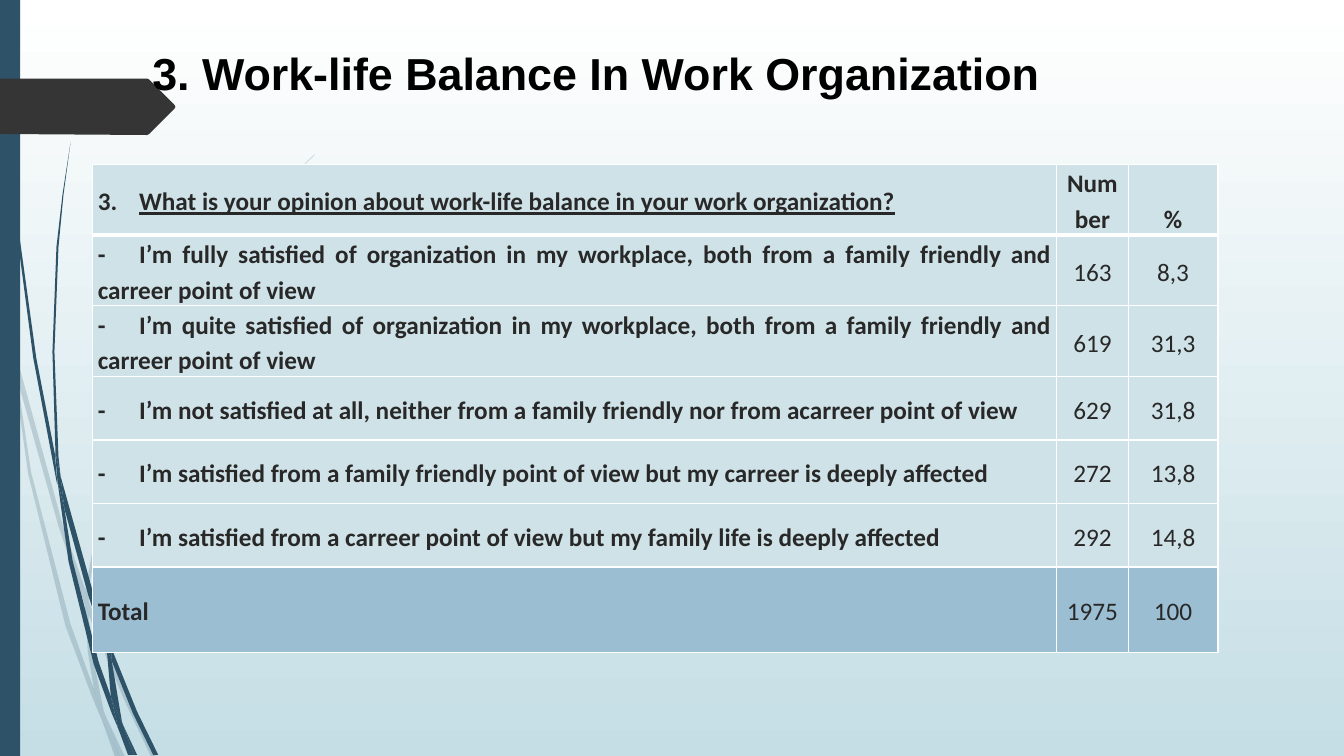
"""Build the slide on work-life balance in the work organization."""
import dataclasses

import pptx
import pptx.dml.color
import pptx.enum.shapes
import pptx.enum.text
import pptx.oxml
import pptx.oxml.ns
import pptx.shapes.shapetree
import pptx.slide
import pptx.table
import pptx.text.text
import pptx.util

PX = 9144
SLIDE_SIZE = (1333, 750)
WHITE = pptx.dml.color.RGBColor(0xFF, 0xFF, 0xFF)
BLACK = pptx.dml.color.RGBColor(0x00, 0x00, 0x00)
INK = pptx.dml.color.RGBColor(0x28, 0x28, 0x28)
NAVY = pptx.dml.color.RGBColor(0x2E, 0x53, 0x69)
CHARCOAL = pptx.dml.color.RGBColor(0x35, 0x35, 0x35)
SKY = pptx.dml.color.RGBColor(0xC5, 0xDE, 0xE5)
PALE = pptx.dml.color.RGBColor(0xCF, 0xE2, 0xE7)
TOTAL_BLUE = pptx.dml.color.RGBColor(0x9B, 0xBE, 0xD3)

ANCHOR = pptx.enum.text.MSO_ANCHOR
ALIGN = pptx.enum.text.PP_ALIGN
Points = tuple[tuple[int, int], ...]


@dataclasses.dataclass(frozen=True)
class Outline:
    """A closed outline in px with its fill."""
    points: Points
    colour: pptx.dml.color.RGBColor = NAVY
    opacity: int = 100


@dataclasses.dataclass(frozen=True)
class Answer:
    """One row of the survey table."""
    label: str
    number: str
    percent: str
    height: int = 63
    fill: pptx.dml.color.RGBColor = PALE


PALE_STEMS: tuple[Points, ...] = (
    ((11, 350), (9, 322), (0, 282), (0, 299), (10, 344)),
    ((58, 522), (84, 599), (85, 586), (62, 520), (14, 345), (17, 376)),
    ((92, 607), (88, 596), (88, 610), (123, 694), (150, 751), (155, 751), (127, 692)),
    ((119, 751), (124, 751), (105, 711)),
    ((93, 683), (70, 619), (31, 469), (17, 376), (11, 350), (28, 470), (65, 621),
     (92, 693), (101, 714), (99, 707)),
    ((84, 599), (87, 646), (93, 683), (96, 692), (105, 711), (103, 706), (91, 646),
     (88, 610), (88, 608)),
    ((88, 584), (110, 462), (160, 349), (229, 245), (268, 198), (290, 175), (312, 154),
     (312, 153), (289, 175), (268, 197), (228, 244), (158, 348), (107, 461), (85, 584),
     (85, 586), (88, 596)),
    ((101, 714), (114, 751), (119, 751)),
    ((88, 608), (88, 610), (88, 596), (85, 586), (84, 599)),
    ((96, 692), (93, 683), (99, 707), (101, 714), (119, 751), (105, 711)),
)
DARK_STEMS: tuple[Points, ...] = (
    ((7, 110), (17, 233), (33, 355), (56, 477), (57, 481), (55, 457), (55, 453),
     (36, 355), (19, 232), (8, 109), (5, 48), (4, 0), (3, 0), (4, 48)),
    ((88, 592), (106, 645), (106, 633), (106, 631), (93, 590), (60, 472), (64, 505)),
    ((113, 649), (110, 641), (111, 656), (132, 708), (152, 749), (157, 749), (136, 706)),
    ((110, 691), (98, 657), (72, 556), (64, 505), (57, 477), (68, 557), (93, 659),
     (111, 708), (117, 722), (116, 717)),
    ((60, 472), (58, 453), (54, 349), (58, 245), (63, 193), (70, 141), (62, 193),
     (56, 245), (52, 349), (55, 449)),
    ((133, 749), (136, 749), (122, 719)),
    ((57, 477), (64, 505), (60, 472), (55, 449), (55, 453)),
    ((111, 633), (125, 552), (158, 476), (205, 406), (231, 374), (245, 359), (261, 344),
     (260, 344), (245, 358), (231, 373), (204, 405), (156, 474), (122, 551), (106, 631),
     (110, 641)),
    ((117, 722), (127, 749), (131, 749)),
    ((106, 645), (110, 691), (116, 706), (122, 719), (121, 716), (111, 656), (109, 651)),
    ((106, 645), (109, 651), (111, 656), (110, 641), (106, 631), (106, 633)),
    ((116, 706), (110, 691), (116, 717), (117, 722), (130, 749), (133, 749), (122, 719)),
)
SIDE_BAR = (0, 0, 20, 750)
PAGE_TAG = Outline(((173, 104), (174, 106), (173, 108), (148, 133), (146, 134), (0, 133),
                    (0, 78), (146, 78), (148, 79)), CHARCOAL)
TITLE_BOX = (92, 40, 953, 114)
TITLE_INDENT = 59
TABLE_BOX = (92, 163, 1116, 482)
COLUMN_WIDTHS = (956, 71, 89)
LABEL_TAB = 41
QUESTION = "What is your opinion about work-life balance in your work organization?"
ANSWERS = (
    Answer("-\tI’m fully satisfied of organization in my workplace, both from a family "
           "friendly and carreer point of view", "163", "8,3"),
    Answer("-\tI’m quite satisfied of organization in my workplace, both from a family "
           "friendly and carreer point of view", "619", "31,3"),
    Answer("-\tI’m not satisfied at all, neither from a family friendly nor from "
           "acarreer point of view", "629", "31,8"),
    Answer("-\tI’m satisfied from a family friendly point of view but my carreer is "
           "deeply affected", "272", "13,8"),
    Answer("-\tI’m satisfied from a carreer point of view but my family life is "
           "deeply affected", "292", "14,8"),
    Answer("Total", "1975", "100", 85, TOTAL_BLUE),
)


def px(length: int) -> pptx.util.Emu:
    """Turn px into EMU."""
    return pptx.util.Emu(length * PX)


def write(paragraph: pptx.text.text._Paragraph, text: str, *, size: int = 18,
          font: str = "Calibri", colour: pptx.dml.color.RGBColor = INK,
          bold: bool = False, underline: bool = False) -> None:
    """Add a formatted run to a paragraph."""
    run = paragraph.add_run()
    run.text = text
    run.font.size = pptx.util.Pt(size)
    run.font.name = font
    run.font.color.rgb = colour
    run.font.bold = bold
    run.font.underline = underline


def draw_outline(shapes: pptx.shapes.shapetree._BaseGroupShapes, outline: Outline) -> None:
    """Draw a filled outline without a line."""
    builder = shapes.build_freeform(*outline.points[0], scale=PX)
    builder.add_line_segments(outline.points[1:], close=True)
    form = builder.convert_to_shape()
    form.shadow.inherit = False
    form.line.fill.background()
    form.fill.solid()
    form.fill.fore_color.rgb = outline.colour
    if outline.opacity < 100:
        colour = form.fill._xPr.find(".//" + pptx.oxml.ns.qn("a:srgbClr"))
        alpha = colour.makeelement(pptx.oxml.ns.qn("a:alpha"),
                                   {"val": str(outline.opacity * 1000)})
        colour.append(alpha)


def style_cell(cell: pptx.table._Cell, fill: pptx.dml.color.RGBColor, anchor: ANCHOR,
               align: ALIGN, top: int, bottom: int) -> pptx.text.text._Paragraph:
    """Format a table cell and return its paragraph."""
    cell.margin_left = cell.margin_right = px(5)
    cell.margin_top = cell.margin_bottom = 0
    cell.vertical_anchor = anchor
    properties = cell._tc.get_or_add_tcPr()
    for side, points in (("L", 1), ("R", 1), ("T", top), ("B", bottom)):
        properties.append(pptx.oxml.parse_xml(
            f'<a:ln{side} {pptx.oxml.ns.nsdecls("a")} w="{points * 12700}">'
            f'<a:solidFill><a:srgbClr val="{WHITE}"/></a:solidFill></a:ln{side}>'))
    cell.fill.solid()
    cell.fill.fore_color.rgb = fill
    paragraph = cell.text_frame.paragraphs[0]
    paragraph.alignment = align
    paragraph.line_spacing = 1.15
    if align == ALIGN.JUSTIFY:
        paragraph._p.get_or_add_pPr().append(pptx.oxml.parse_xml(
            f'<a:tabLst {pptx.oxml.ns.nsdecls("a")}>'
            f'<a:tab pos="{px(LABEL_TAB)}" algn="l"/></a:tabLst>'))
    return paragraph


def draw_backdrop(slide: pptx.slide.Slide) -> None:
    """Draw the gradient, the stems, the side bar and the page tag."""
    backdrop = slide.background.fill
    backdrop.gradient()
    backdrop.gradient_angle = 270
    for stop, colour in zip(backdrop.gradient_stops, (WHITE, SKY)):
        stop.color.rgb = colour
    for stems, opacity in ((PALE_STEMS, 20), (DARK_STEMS, 100)):
        cluster = slide.shapes.add_group_shape()
        for points in stems:
            draw_outline(cluster.shapes, Outline(points, opacity=opacity))
    side_bar = slide.shapes.add_shape(pptx.enum.shapes.MSO_SHAPE.RECTANGLE,
                                      *map(px, SIDE_BAR))
    side_bar.shadow.inherit = False
    side_bar.fill.solid()
    side_bar.fill.fore_color.rgb = NAVY
    side_bar.line.fill.background()
    draw_outline(slide.shapes, PAGE_TAG)


def draw_title(slide: pptx.slide.Slide) -> None:
    """Place the title in front of the page tag."""
    title = slide.shapes.title
    title.left, title.top, title.width, title.height = map(px, TITLE_BOX)
    frame = title.text_frame
    frame.word_wrap = True
    frame.auto_size = pptx.enum.text.MSO_AUTO_SIZE.NONE
    frame.vertical_anchor = ANCHOR.TOP
    frame.margin_left = px(TITLE_INDENT)
    frame.paragraphs[0].alignment = ALIGN.LEFT
    write(frame.paragraphs[0], "3. Work-life Balance In Work Organization",
          size=32, font="Arial", colour=BLACK, bold=True)
    slide.shapes._spTree.append(title._element)


def draw_survey(slide: pptx.slide.Slide) -> None:
    """Draw the table of answers."""
    survey = slide.shapes.add_table(len(ANSWERS) + 1, 3, *map(px, TABLE_BOX)).table
    survey.horz_banding = False
    for column, width in zip(survey.columns, COLUMN_WIDTHS):
        column.width = px(width)
    survey.rows[0].height = px(63)
    question = style_cell(survey.cell(0, 0), PALE, ANCHOR.MIDDLE, ALIGN.JUSTIFY, 1, 3)
    write(question, "3.\t", bold=True)
    write(question, QUESTION, bold=True, underline=True)
    for column, heading in enumerate(("Number", "%"), start=1):
        write(style_cell(survey.cell(0, column), PALE, ANCHOR.BOTTOM, ALIGN.CENTER, 1, 3),
              heading, bold=True)
    for row, answer in enumerate(ANSWERS, start=1):
        survey.rows[row].height = px(answer.height)
        for column, text in enumerate((answer.label, answer.number, answer.percent)):
            align = ALIGN.CENTER if column else ALIGN.JUSTIFY
            write(style_cell(survey.cell(row, column), answer.fill, ANCHOR.MIDDLE, align,
                             3 if row == 1 else 1, 1), text, bold=column == 0)


def main() -> None:
    """Build and save the slide."""
    deck = pptx.Presentation()
    deck.slide_width, deck.slide_height = map(px, SLIDE_SIZE)
    slide = deck.slides.add_slide(deck.slide_layouts[5])
    draw_backdrop(slide)
    draw_title(slide)
    draw_survey(slide)
    deck.save("out.pptx")


if __name__ == "__main__":
    main()
